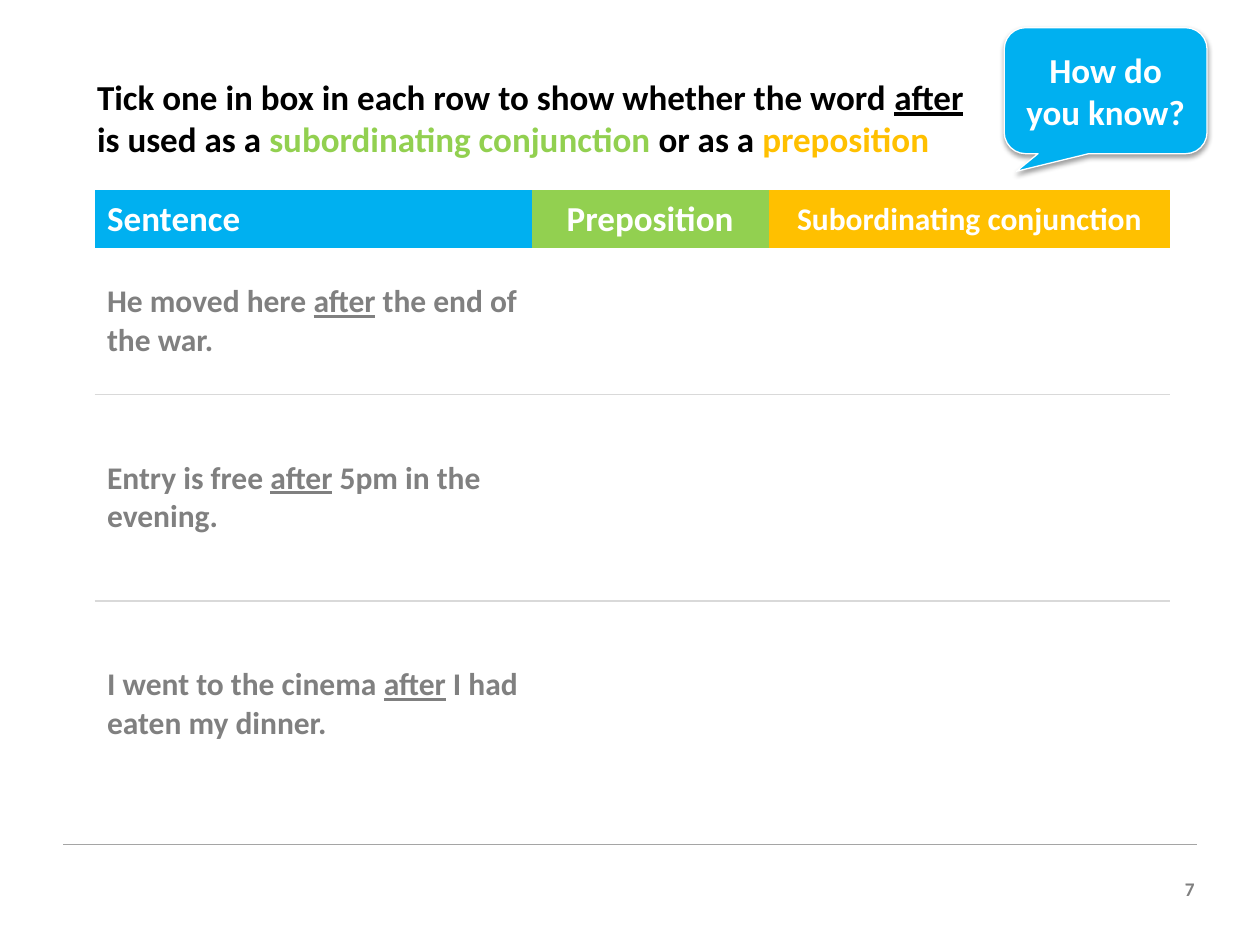
import pptx
import pptx.dml.color
import pptx.enum.shapes
import pptx.enum.text
import pptx.oxml
import pptx.oxml.ns
import pptx.util
from pptx.util import Inches

RGBColor = pptx.dml.color.RGBColor
ALIGN = pptx.enum.text.PP_ALIGN
ANCHOR = pptx.enum.text.MSO_ANCHOR
AUTO_SIZE = pptx.enum.text.MSO_AUTO_SIZE

BLUE = RGBColor(0x00, 0xB0, 0xF0)
GREEN = RGBColor(0x92, 0xD0, 0x50)
AMBER = RGBColor(0xFF, 0xC0, 0x00)
WHITE = RGBColor(0xFF, 0xFF, 0xFF)
BLACK = RGBColor(0x00, 0x00, 0x00)
TEXT_GREY = RGBColor(0x80, 0x80, 0x80)
NUMBER_GREY = RGBColor(0x7F, 0x7F, 0x7F)
RULE_GREY = RGBColor(0xA5, 0xA5, 0xA5)
BORDER_GREY = RGBColor(0xD9, 0xD9, 0xD9)

FONT = "Calibri"
NO_GRID_STYLE = "{2D5ABB26-0587-4C30-8999-92F81FD0307C}"
COLUMN_WIDTHS = [3.47, 1.88, 3.19]
ROW_HEIGHTS = [0.46, 1.16, 1.64, 1.64]
HEADERS = [
    ("Sentence", 20, BLUE, ALIGN.LEFT),
    ("Preposition", 20, GREEN, ALIGN.CENTER),
    ("Subordinating conjunction", 18, AMBER, ALIGN.CENTER),
]
# Each sentence is split around the underlined word "after"
SENTENCES = [
    ("He moved here ", " the end of the war."),
    ("Entry is free ", " 5pm in the evening."),
    ("I went to the cinema ", " I had eaten my dinner."),
]


def add_text(paragraph, text, size=20, color=BLACK, underline=False, align=ALIGN.LEFT):
    paragraph.alignment = align
    run = paragraph.add_run()
    run.text = text
    run.font.name = FONT
    run.font.size = pptx.util.Pt(size)
    run.font.bold = True
    run.font.underline = underline
    run.font.color.rgb = color


def add_effects(shape, content=""):
    namespace = pptx.oxml.ns.nsdecls("a")
    effects = pptx.oxml.parse_xml(f"<a:effectLst {namespace}>{content}</a:effectLst>")
    shape._element.spPr.append(effects)


def add_border(cell, side):
    namespace = pptx.oxml.ns.nsdecls("a")
    cell._tc.get_or_add_tcPr().append(pptx.oxml.parse_xml(
        f'<a:{side} {namespace} w="12700"><a:solidFill>'
        f'<a:srgbClr val="{BORDER_GREY}"/></a:solidFill></a:{side}>'))


def add_title(slide):
    title = slide.shapes.title
    title.left, title.top = Inches(0.67), Inches(0.55)
    title.width, title.height = Inches(7.29), Inches(0.77)
    frame = title.text_frame
    frame.word_wrap = True
    frame.auto_size = AUTO_SIZE.SHAPE_TO_FIT_TEXT
    frame.vertical_anchor = ANCHOR.TOP
    paragraph = frame.paragraphs[0]
    add_text(paragraph, "Tick one in box in each row to show whether the word ")
    add_text(paragraph, "after", underline=True)
    add_text(paragraph, " is used as a ")
    add_text(paragraph, "subordinating conjunction ", color=GREEN)
    add_text(paragraph, "or as a ")
    add_text(paragraph, "preposition", color=AMBER)


def fill_cell(cell, color):
    cell.vertical_anchor = ANCHOR.MIDDLE
    cell.fill.solid()
    cell.fill.fore_color.rgb = color


def add_sentence_table(slide):
    table = slide.shapes.add_table(
        len(ROW_HEIGHTS), len(COLUMN_WIDTHS), Inches(0.75), Inches(1.51),
        Inches(sum(COLUMN_WIDTHS)), Inches(sum(ROW_HEIGHTS))).table
    table._tbl.tblPr.find(pptx.oxml.ns.qn("a:tableStyleId")).text = NO_GRID_STYLE
    table.horz_banding = False
    for column, width in zip(table.columns, COLUMN_WIDTHS):
        column.width = Inches(width)
    for row, height in zip(table.rows, ROW_HEIGHTS):
        row.height = Inches(height)

    # Header row
    for cell, (text, size, color, align) in zip(table.rows[0].cells, HEADERS):
        fill_cell(cell, color)
        add_text(cell.text_frame.paragraphs[0], text, size=size, color=WHITE, align=align)

    # Sentence rows, with rules only between them
    for index, (before, after) in enumerate(SENTENCES, start=1):
        for cell in table.rows[index].cells:
            if index > 1:
                add_border(cell, "lnT")
            if index < len(SENTENCES):
                add_border(cell, "lnB")
            fill_cell(cell, WHITE)
        paragraph = table.cell(index, 0).text_frame.paragraphs[0]
        add_text(paragraph, before, size=18, color=TEXT_GREY)
        add_text(paragraph, "after", size=18, color=TEXT_GREY, underline=True)
        add_text(paragraph, after, size=18, color=TEXT_GREY)


def add_callout(slide):
    callout = slide.shapes.add_shape(
        pptx.enum.shapes.MSO_SHAPE.ROUNDED_RECTANGULAR_CALLOUT,
        Inches(7.97), Inches(0.22), Inches(1.61), Inches(1))
    for index, value in enumerate([-0.44, 0.64, 0.17]):
        callout.adjustments[index] = value
    callout.fill.solid()
    callout.fill.fore_color.rgb = BLUE
    callout.line.color.rgb = WHITE
    callout.line.width = pptx.util.Pt(0.75)
    add_effects(callout, (
        '<a:outerShdw blurRad="39370" dist="20320" dir="5400000" rotWithShape="0">'
        '<a:srgbClr val="000000"><a:alpha val="38000"/></a:srgbClr></a:outerShdw>'))
    frame = callout.text_frame
    frame.word_wrap = True
    frame.vertical_anchor = ANCHOR.MIDDLE
    add_text(frame.paragraphs[0], "How do you know?", color=WHITE, align=ALIGN.CENTER)


def add_footer(slide):
    rule = slide.shapes.add_connector(
        pptx.enum.shapes.MSO_CONNECTOR.STRAIGHT,
        Inches(0.5), Inches(6.7), Inches(9.5), Inches(6.7))
    rule.line.color.rgb = RULE_GREY
    rule.line.width = pptx.util.Pt(0.75)
    add_effects(rule)
    number = slide.shapes.add_textbox(Inches(9.2), Inches(6.91), Inches(0.38), Inches(0.29))
    frame = number.text_frame
    frame.word_wrap = True
    frame.auto_size = AUTO_SIZE.SHAPE_TO_FIT_TEXT
    add_text(frame.paragraphs[0], "7", size=11, color=NUMBER_GREY, align=ALIGN.RIGHT)


def main():
    presentation = pptx.Presentation()
    presentation.slide_width = Inches(10)
    presentation.slide_height = Inches(7.5)
    slide = presentation.slides.add_slide(presentation.slide_layouts[5])
    add_footer(slide)
    add_sentence_table(slide)
    add_title(slide)
    add_callout(slide)
    presentation.save("out.pptx")


if __name__ == "__main__":
    main()
